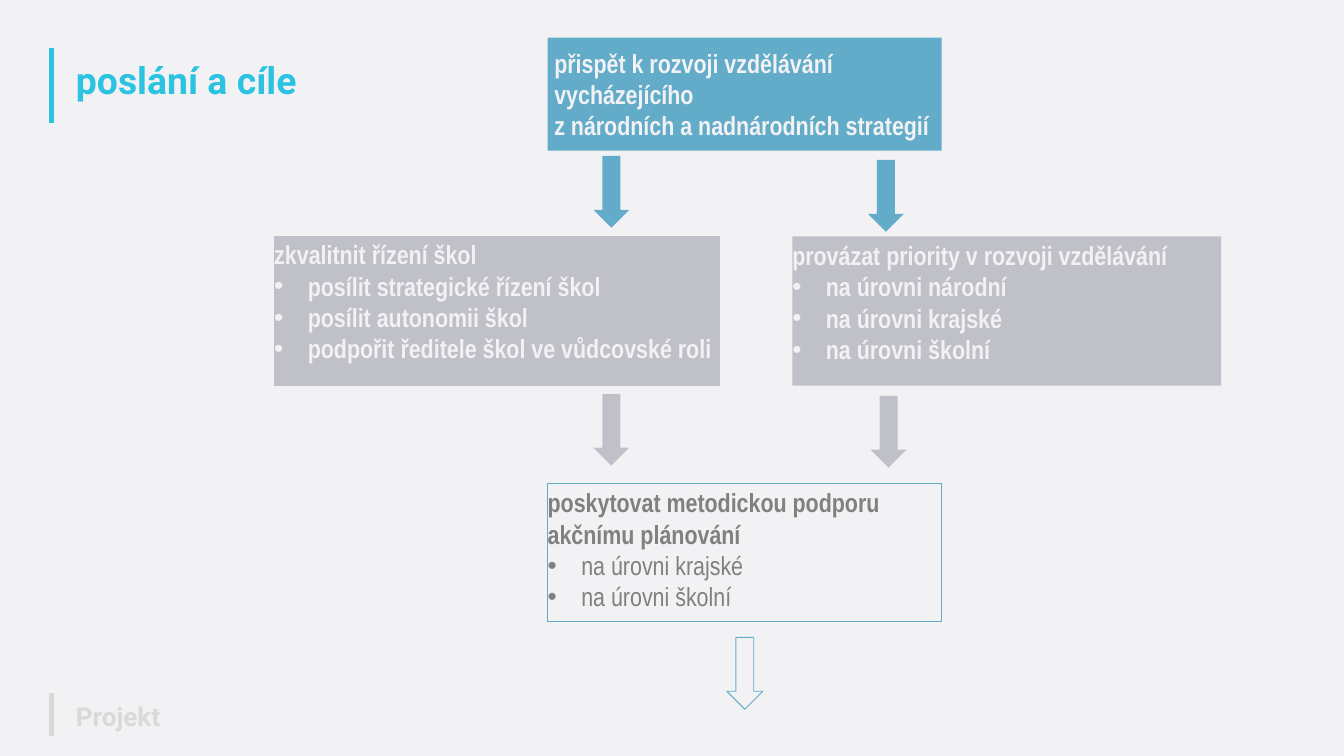
from dataclasses import dataclass

from lxml import etree
from pptx import Presentation
from pptx.dml.color import RGBColor
from pptx.enum.shapes import MSO_CONNECTOR, MSO_SHAPE
from pptx.enum.text import MSO_ANCHOR, MSO_AUTO_SIZE, PP_ALIGN
from pptx.oxml.ns import qn
from pptx.util import Pt

RECTANGLE = MSO_SHAPE.RECTANGLE
RIGHT_ARROW = MSO_SHAPE.RIGHT_ARROW
STRAIGHT = MSO_CONNECTOR.STRAIGHT
TOP, MIDDLE = MSO_ANCHOR.TOP, MSO_ANCHOR.MIDDLE
FIT_SHAPE = MSO_AUTO_SIZE.SHAPE_TO_FIT_TEXT
LEFT = PP_ALIGN.LEFT

PAPER, BLUE, GREY, TEXT_GREY = "F2F2F5", "62ACC9", "C0C0C8", "808080"
CYAN, PALE = "2BC3E1", "D9D9D9"
BODY_FONT, TITLE_FONT = "Arial Narrow", "Roboto"
BODY_SIZE, TITLE_SIZE = 28, 40
BULLET_INDENT = 36
ARROW_LENGTH, ARROW_WIDTH = 77, 38.4
BAR_X, LABEL_X = 55.4, 74.2


@dataclass
class Goal:
    left: float
    top: float
    width: float
    height: float
    fill: str
    color: str
    heading: list[str]
    bullets: list[str]
    outline: str = ""
    bold_bullets: bool = True
    anchor: int = TOP
    insets: tuple = (0, 2.9, 0, 0)


@dataclass
class Arrow:
    center_x: float
    center_y: float
    fill: str
    outline: str = ""


GOALS = [
    Goal(586.8, 40.3, 422, 121, BLUE, PAPER,
         ["přispět k rozvoji vzdělávání", "vycházejícího",
          "z národních a nadnárodních strategií"], [],
         anchor=MIDDLE, insets=(7.2, 3.6, 7.2, 3.6)),
    Goal(293.8, 252.9, 477.5, 160.6, GREY, PAPER,
         ["zkvalitnit řízení škol"],
         ["posílit strategické řízení škol", "posílit autonomii škol",
          "podpořit ředitele škol ve vůdcovské roli"]),
    Goal(848.9, 253.4, 459.4, 159.8, GREY, PAPER,
         ["provázat priority v rozvoji vzdělávání"],
         ["na úrovni národní", "na úrovni krajské", "na úrovni školní"]),
    Goal(586.8, 518.4, 422, 147.6, PAPER, TEXT_GREY,
         ["poskytovat metodickou podporu", "akčnímu plánování"],
         ["na úrovni krajské", "na úrovni školní"],
         outline=BLUE, bold_bullets=False),
]

ARROWS = [
    Arrow(655, 205.6, BLUE),
    Arrow(949.2, 209.8, BLUE),
    Arrow(655, 460.4, GREY),
    Arrow(952, 462.6, GREY),
    Arrow(798, 721.4, PAPER, BLUE),
]


def rgb(color: str) -> RGBColor:
    return RGBColor.from_string(color)


def paint(shape, fill: str, outline: str) -> None:
    shape.shadow.inherit = False
    shape.fill.solid()
    shape.fill.fore_color.rgb = rgb(fill)
    if outline:
        shape.line.color.rgb = rgb(outline)
        shape.line.width = Pt(1)
    else:
        shape.line.fill.background()


def add_span(para, text: str, font: str, size: float, color: str, bold: bool = True) -> None:
    para.alignment = LEFT
    span = para.add_run()
    span.text = text
    span.font.name = font
    span.font.size = Pt(size)
    span.font.bold = bold
    span.font.color.rgb = rgb(color)


def add_bullet(para) -> None:
    properties = para._p.get_or_add_pPr()
    indent = Pt(BULLET_INDENT)
    properties.set("marL", str(indent))
    properties.set("indent", str(-indent))
    etree.SubElement(properties, qn("a:buFont")).set("typeface", "Arial")
    etree.SubElement(properties, qn("a:buChar")).set("char", "•")


def draw_goal(page, goal: Goal) -> None:
    box = page.shapes.add_shape(RECTANGLE, Pt(goal.left), Pt(goal.top),
                                Pt(goal.width), Pt(goal.height))
    paint(box, goal.fill, goal.outline)
    frame = box.text_frame
    frame.word_wrap = True
    frame.vertical_anchor = goal.anchor
    (frame.margin_left, frame.margin_top,
     frame.margin_right, frame.margin_bottom) = map(Pt, goal.insets)
    for index, text in enumerate(goal.heading + goal.bullets):
        para = frame.add_paragraph() if index else frame.paragraphs[0]
        is_bullet = index >= len(goal.heading)
        if is_bullet:
            add_bullet(para)
        add_span(para, text, BODY_FONT, BODY_SIZE, goal.color,
                 goal.bold_bullets or not is_bullet)


def draw_arrow(page, arrow: Arrow) -> None:
    shape = page.shapes.add_shape(
        RIGHT_ARROW, Pt(arrow.center_x - ARROW_LENGTH / 2),
        Pt(arrow.center_y - ARROW_WIDTH / 2), Pt(ARROW_LENGTH), Pt(ARROW_WIDTH))
    shape.rotation = 90
    paint(shape, arrow.fill, arrow.outline)


def draw_bar(page, top: float, bottom: float, color: str) -> None:
    bar = page.shapes.add_connector(STRAIGHT, Pt(BAR_X), Pt(top), Pt(BAR_X), Pt(bottom))
    bar.line.color.rgb = rgb(color)
    bar.line.width = Pt(5)
    etree.SubElement(bar._element.spPr, qn("a:effectLst"))


def fill_title(page) -> None:
    title = page.shapes.title
    title.left, title.top, title.width, title.height = Pt(LABEL_X), Pt(63.4), Pt(1299.6), Pt(51)
    frame = title.text_frame
    frame.auto_size = FIT_SHAPE
    frame.vertical_anchor = TOP
    para = frame.paragraphs[0]
    para.line_spacing = 0.9
    add_span(para, "poslání a cíle", TITLE_FONT, TITLE_SIZE, CYAN)


def draw_footer(page) -> None:
    box = page.shapes.add_textbox(Pt(LABEL_X), Pt(746), Pt(200), Pt(42))
    box.text_frame.word_wrap = True
    box.text_frame.vertical_anchor = MIDDLE
    add_span(box.text_frame.paragraphs[0], "Projekt", TITLE_FONT, BODY_SIZE, PALE)


def main() -> None:
    deck = Presentation()
    deck.slide_width, deck.slide_height = Pt(1440), Pt(810)
    page = deck.slides.add_slide(deck.slide_layouts.get_by_name("Title Only"))
    page.background.fill.solid()
    page.background.fill.fore_color.rgb = rgb(PAPER)
    draw_bar(page, 51.1, 131.8, CYAN)
    draw_bar(page, 742.3, 789.1, PALE)
    fill_title(page)
    draw_footer(page)
    for goal in GOALS:
        draw_goal(page, goal)
    for arrow in ARROWS:
        draw_arrow(page, arrow)
    deck.save("out.pptx")


if __name__ == "__main__":
    main()
